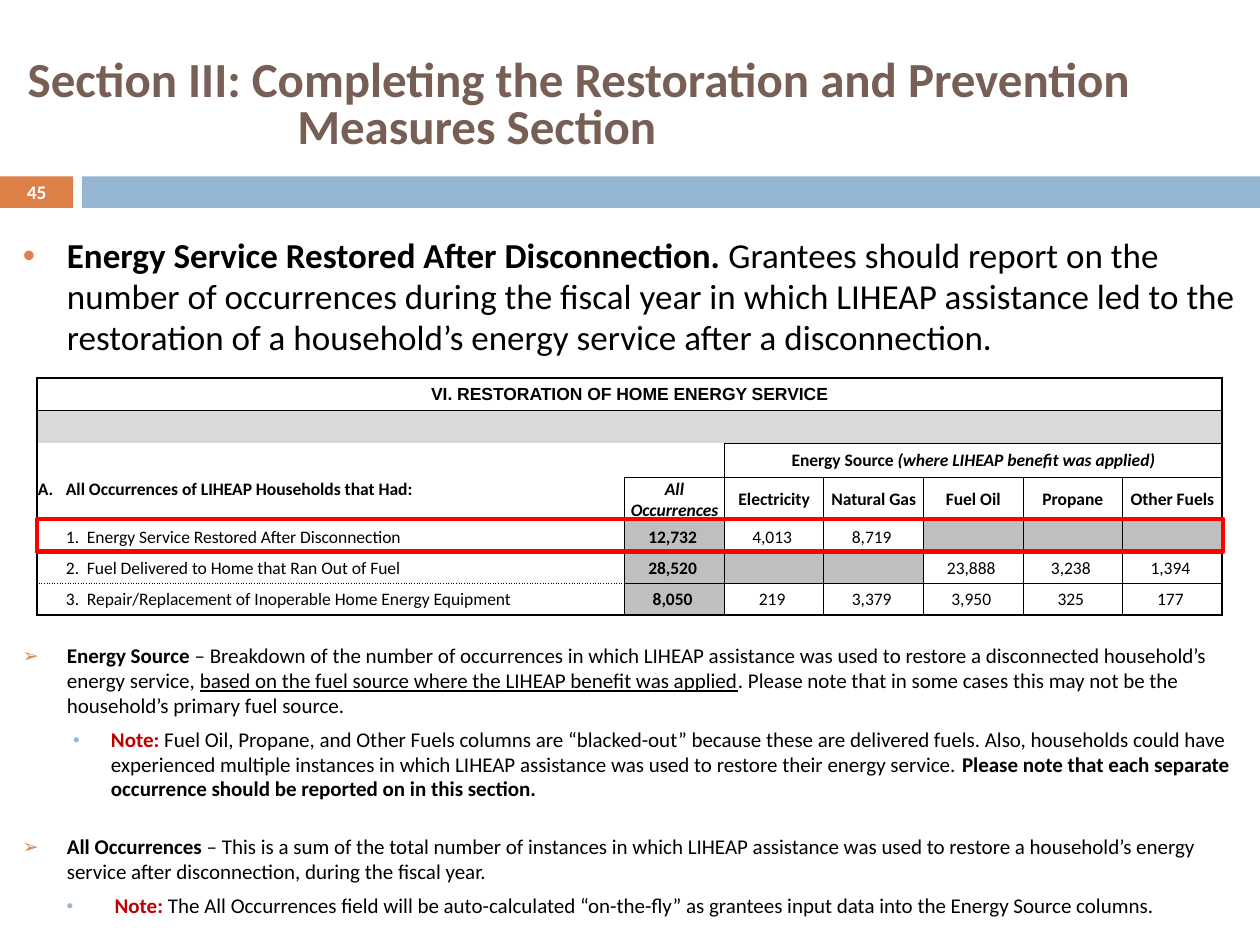
from dataclasses import dataclass

from lxml.etree import SubElement
from pptx import Presentation
from pptx.dml.color import RGBColor as RGB
from pptx.enum.shapes import MSO_SHAPE as SHAPE
from pptx.enum.text import MSO_ANCHOR as ANCHOR, MSO_AUTO_SIZE as AUTOSIZE, PP_ALIGN as ALIGN
from pptx.oxml.ns import qn
from pptx.util import Pt


@dataclass(frozen=True)
class Theme:
    font: str = "Calibri"
    banner_font: str = "Arial"
    black: str = "000000"
    white: str = "FFFFFF"
    brown: str = "775F55"
    orange: str = "DD8047"
    blue: str = "94B6D2"
    note: str = "C00000"
    highlight: str = "FF0000"
    band: str = "D9D9D9"
    blocked: str = "BFBFBF"
    title: float = 28
    lead: float = 20
    body: float = 12
    number: float = 11
    table: float = 10


T = Theme()
COLS = [336] + [56.9] * 6
ROWS = [18.5, 18.9, 19.4, 24.6, 18.2, 17.9, 17.9]
HEADINGS = ["All Occurrences", "Electricity", "Natural Gas", "Fuel Oil", "Propane", "Other Fuels"]
MEASURES = [
    ("1.\tEnergy Service Restored After Disconnection", [12732, 4013, 8719, None, None, None]),
    ("2.\tFuel Delivered to Home that Ran Out of Fuel", [28520, None, None, 23888, 3238, 1394]),
    ("3.\tRepair/Replacement of Inoperable Home Energy Equipment", [8050, 219, 3379, 3950, 325, 177]),
]
HIDDEN = {(1, 0): "RB", (1, 1): "LRB", (2, 0): "TRB", (2, 1): "TL", (3, 0): "T"}
HIDDEN.update({(1, c): "LR" for c in range(2, 6)}, **{})
HIDDEN[1, 6] = "L"
DOTTED = {(4, 0): "B", (5, 0): "TB", (6, 0): "T"}

LEAD = [("Energy Service Restored After Disconnection. ", "b"),
        ("Grantees should report on the number of occurrences during the fiscal year in which LIHEAP "
         "assistance led to the restoration of a household’s energy service after a disconnection.", "")]
SOURCE = [("Energy Source ", "b"),
          ("– Breakdown of the number of occurrences in which LIHEAP assistance was used to restore a "
           "disconnected household’s energy service, ", ""),
          ("based on the fuel source where the LIHEAP benefit was applied", "u"),
          (". Please note that in some cases this may not be the household’s primary fuel source.", "")]
SOURCE_NOTE = [("Note: ", "bn"),
               ("Fuel Oil, Propane, and Other Fuels columns are “blacked-out” because these are delivered "
                "fuels. Also, households could have experienced multiple instances in which LIHEAP "
                "assistance was used to restore their energy service. ", ""),
               ("Please note that each separate occurrence should be reported on in this section.", "b")]
TOTAL = [("All Occurrences ", "b"),
         ("– This is a sum of the total number of instances in which LIHEAP assistance was used to restore "
          "a household’s energy service after disconnection, during the fiscal year.", "")]
TOTAL_NOTE = [("Note: ", "bn"),
              ("The All Occurrences field will be auto-calculated “on-the-fly” as grantees input data into "
               "the Energy Source columns.", "")]


def add_runs(p, parts, size, color=T.black, font=T.font):
    for text, marks in parts:
        r = p.add_run()
        r.text = text
        f = r.font
        f.name, f.size = font, Pt(size)
        f.bold, f.italic, f.underline = "b" in marks, "i" in marks, "u" in marks
        f.color.rgb = RGB.from_string(T.note if "n" in marks else color)


def set_indent(p, left, first):
    pPr = p._p.get_or_add_pPr()
    pPr.set("marL", str(Pt(left)))
    pPr.set("indent", str(Pt(first)))
    return pPr


def set_insets(item, left, top, right, bottom):
    item.margin_left, item.margin_top = Pt(left), Pt(top)
    item.margin_right, item.margin_bottom = Pt(right), Pt(bottom)


def add_bar(slide, left, top, width, height, fill=None, line=None):
    sp = slide.shapes.add_shape(SHAPE.RECTANGLE, Pt(left), Pt(top), Pt(width), Pt(height))
    sp.shadow.inherit = False
    if fill:
        sp.fill.solid()
        sp.fill.fore_color.rgb = RGB.from_string(fill)
    else:
        sp.fill.background()
    if line:
        sp.line.color.rgb = RGB.from_string(line)
        sp.line.width = Pt(2.5)
    else:
        sp.line.fill.background()
    return sp


def add_title(slide):
    sp = slide.shapes.title
    sp.left, sp.top, sp.width, sp.height = Pt(0), Pt(22.3), Pt(720), Pt(77.8)
    tf = sp.text_frame
    tf.auto_size, tf.vertical_anchor = AUTOSIZE.NONE, ANCHOR.MIDDLE
    p = tf.paragraphs[0]
    p.alignment, p.line_spacing = ALIGN.LEFT, 0.8
    set_indent(p, 162.7, -154.1)
    add_runs(p, [("Section III: Completing the Restoration and Prevention Measures Section", "b")],
             T.title, T.brown)


def add_page_number(slide):
    tf = add_bar(slide, 0, 100.8, 41.8, 18, T.orange).text_frame
    set_insets(tf, 0, 0, 0, 0)
    tf.vertical_anchor = ANCHOR.MIDDLE
    p = tf.paragraphs[0]
    p.alignment = ALIGN.CENTER
    add_runs(p, [("45", "b")], T.number, T.white)


def add_bullets(slide, top, height, size, items):
    tf = slide.shapes.add_textbox(Pt(13), Pt(top), Pt(694), Pt(height)).text_frame
    tf.word_wrap = True
    set_insets(tf, 0, 0, 0, 0)
    for i, (parts, mark, color, percent, left, first, before) in enumerate(items):
        p = tf.add_paragraph() if i else tf.paragraphs[0]
        p.line_spacing, p.space_before = 0.98, Pt(before)
        pPr = set_indent(p, left, first)
        SubElement(SubElement(pPr, qn("a:buClr")), qn("a:srgbClr"), val=color)
        SubElement(pPr, qn("a:buSzPct"), val=str(percent * 1000))
        SubElement(pPr, qn("a:buFont"), typeface="Arial")
        SubElement(pPr, qn("a:buChar"), char=mark)
        add_runs(p, parts, size)


def set_borders(cell, row, col, last_col):
    tcPr = cell._tc.get_or_add_tcPr()
    outer = {"L": col == 0, "R": last_col == 6, "T": row == 0, "B": row == 6}
    for i, side in enumerate("LRTB"):
        ln = tcPr.makeelement(qn(f"a:ln{side}"), {"w": str(Pt(1 if outer[side] else 0.5))})
        tcPr.insert(i, ln)
        if side in HIDDEN.get((row, col), ""):
            SubElement(ln, qn("a:noFill"))
            continue
        SubElement(SubElement(ln, qn("a:solidFill")), qn("a:srgbClr"), val=T.black)
        dash = "sysDot" if side in DOTTED.get((row, col), "") else "solid"
        SubElement(ln, qn("a:prstDash"), val=dash)


def fill_cell(cell, parts, align=ALIGN.CENTER, font=T.font):
    p = cell.text_frame.paragraphs[0]
    p.alignment = align
    add_runs(p, parts, T.table, font=font)
    return p


def add_restoration_table(slide):
    frame = slide.shapes.add_table(7, 7, Pt(21), Pt(216), Pt(sum(COLS)), Pt(sum(ROWS)))
    table = frame.table
    table.first_row = table.horz_banding = False
    for items, sizes, side in ((table.columns, COLS, "width"), (table.rows, ROWS, "height")):
        for item, size in zip(items, sizes):
            setattr(item, side, Pt(size))
    table.cell(0, 0).merge(table.cell(0, 6))
    table.cell(2, 2).merge(table.cell(2, 6))

    fill_cell(table.cell(0, 0), [("VI. RESTORATION OF HOME ENERGY SERVICE", "b")], font=T.banner_font)
    fill_cell(table.cell(2, 2), [("Energy Source ", "b"), ("(where LIHEAP benefit was applied)", "bi")])
    p = fill_cell(table.cell(3, 0), [("A.\tAll Occurrences of LIHEAP Households that Had:", "b")], ALIGN.LEFT)
    set_indent(p, 16, -16)
    for c, heading in enumerate(HEADINGS, 1):
        fill_cell(table.cell(3, c), [(heading, "bi" if c == 1 else "b")])
    for r, (label, values) in enumerate(MEASURES, 4):
        set_indent(fill_cell(table.cell(r, 0), [(label, "")], ALIGN.LEFT), 28, -12)
        for c, value in enumerate(values, 1):
            if value is not None:
                fill_cell(table.cell(r, c), [(f"{value:,} ", "b" if c == 1 else "")])

    for r in range(7):
        for c in range(7):
            cell = table.cell(r, c)
            set_insets(cell, 0.7, 0.7, 0.7, 0)
            cell.vertical_anchor = ANCHOR.TOP if (r, c) == (3, 0) else ANCHOR.MIDDLE
            blocked = r > 3 and c > 0 and (c == 1 or MEASURES[r - 4][1][c - 1] is None)
            if r == 1 or blocked:
                cell.fill.solid()
                cell.fill.fore_color.rgb = RGB.from_string(T.band if r == 1 else T.blocked)
            else:
                cell.fill.background()
            if not cell.text:
                end = cell.text_frame.paragraphs[0]._p.get_or_add_endParaRPr()
                end.set("sz", str(T.table * 100))
            set_borders(cell, r, c, 6 if cell.is_merge_origin else c)


def main():
    prs = Presentation()
    prs.slide_width, prs.slide_height = Pt(720), Pt(540)
    slide = prs.slides.add_slide(prs.slide_layouts[5])
    add_title(slide)
    add_page_number(slide)
    add_bar(slide, 46.8, 100.8, 673.2, 18, T.blue)
    add_bullets(slide, 134.5, 76, T.lead, [(LEAD, "•", T.orange, 100, 25.2, -25.2, 0)])
    add_restoration_table(slide)
    add_bar(slide, 21, 296.6, 678, 18.7, line=T.highlight)
    add_bullets(slide, 368, 164, T.body, [
        (SOURCE, "➢", T.orange, 90, 25.2, -25.2, 0),
        (SOURCE_NOTE, "•", T.blue, 90, 50.4, -21.6, 5.5),
        (TOTAL, "➢", T.orange, 90, 25.2, -25.2, 19),
        (TOTAL_NOTE, "•", T.blue, 90, 52.5, -27.4, 5.5),
    ])
    prs.save("out.pptx")


if __name__ == "__main__":
    main()
